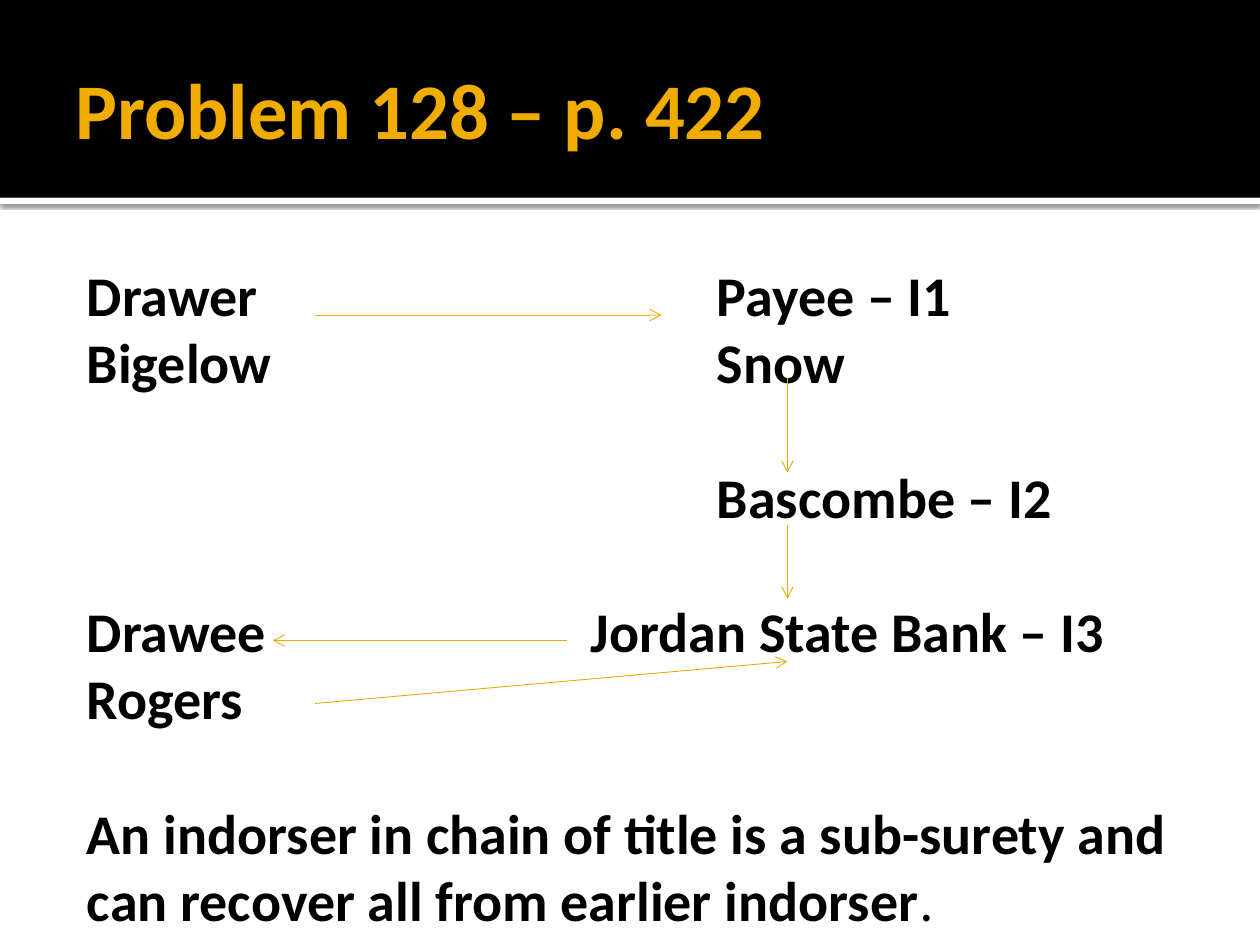
from typing import NamedTuple

from lxml import etree
from pptx import Presentation
from pptx.dml.color import RGBColor
from pptx.enum import shapes, text
from pptx.oxml import ns
from pptx.util import Pt

COLORS = {"black": "000000", "white": "FFFFFF", "gold": "F0AD00", "arrow": "EBA900"}
FONT = "Calibri"
LINE_HEIGHT = 38.4


class Box(NamedTuple):
    left: float
    top: float
    width: float
    height: float


class Arrow(NamedTuple):
    start: tuple[float, float]
    end: tuple[float, float]


class Row(NamedTuple):
    wording: str
    tab: float = 0
    gap: bool = False
    ending: str = ""


PARTY_ROWS = [
    Row("Drawer\tPayee – I1", tab=360),
    Row("Bigelow\tSnow", tab=360),
    Row("\tBascombe – I2", tab=360, gap=True),
    Row("Drawee\tJordan State Bank – I3", tab=288, gap=True),
    Row("Rogers"),
    Row("An indorser in chain of title is a sub-surety and "
        "can recover all from earlier indorser", gap=True, ending="."),
]
ARROWS = [
    Arrow((180, 180), (378, 180)),
    Arrow((450, 216), (450, 270)),
    Arrow((450, 300), (450, 342)),
    Arrow((324, 366), (156, 366)),
    Arrow((180, 402), (450, 378)),
]


def add_element(parent, tag: str, **attributes: str):
    return etree.SubElement(parent, ns.qn(tag), attributes)


def add_band(slide, box: Box, color: str):
    shape = slide.shapes.add_shape(shapes.MSO_SHAPE.RECTANGLE, *map(Pt, box))
    shape.shadow.inherit = False
    shape.fill.solid()
    shape.fill.fore_color.rgb = RGBColor.from_string(COLORS[color])
    shape.line.fill.background()
    return shape


def add_drop_shadow(shape) -> None:
    """Put a soft downward shadow into the shape's empty effect list."""
    effects = shape._element.spPr.find(ns.qn("a:effectLst"))
    shadow = add_element(effects, "a:outerShdw", blurRad=str(Pt(2.5)),
                         dist=str(Pt(0.8)), dir="5400000",
                         algn="tl", rotWithShape="0")
    color = add_element(shadow, "a:srgbClr", val=COLORS["black"])
    add_element(color, "a:alpha", val="60000")


def add_text_frame(slide, box: Box, insets: tuple[float, float, float, float], anchor):
    """Add a wrapping text box; insets are left, top, right, bottom."""
    frame = slide.shapes.add_textbox(*map(Pt, box)).text_frame
    frame.word_wrap = True
    frame.vertical_anchor = anchor
    frame.margin_left, frame.margin_top, frame.margin_right, frame.margin_bottom = map(Pt, insets)
    return frame


def add_text(paragraph, wording: str, *, size: float, color: str, bold: bool = True) -> None:
    run = paragraph.add_run()
    run.text = wording
    run.font.name = FONT
    run.font.size = Pt(size)
    run.font.bold = bold
    run.font.color.rgb = RGBColor.from_string(COLORS[color])


def add_row(paragraph, row: Row) -> None:
    paragraph.line_spacing = Pt(LINE_HEIGHT)
    paragraph.space_before = Pt(LINE_HEIGHT if row.gap else 0)
    if row.tab:
        tabs = add_element(paragraph._p.get_or_add_pPr(), "a:tabLst")
        add_element(tabs, "a:tab", pos=str(Pt(row.tab)), algn="l")
    add_text(paragraph, row.wording, size=32, color="black")
    if row.ending:
        add_text(paragraph, row.ending, size=32, color="black", bold=False)


def add_arrow(slide, arrow: Arrow) -> None:
    connector = slide.shapes.add_connector(
        shapes.MSO_CONNECTOR.STRAIGHT, *map(Pt, arrow.start + arrow.end))
    connector.line.color.rgb = RGBColor.from_string(COLORS["arrow"])
    connector.line.width = Pt(0.5)
    add_element(connector.line._get_or_add_ln(), "a:tailEnd", type="arrow")
    add_element(connector._element.spPr, "a:effectLst")


def main() -> None:
    presentation = Presentation()
    presentation.slide_width, presentation.slide_height = Pt(720), Pt(540)
    slide = presentation.slides.add_slide(presentation.slide_layouts[6])

    add_drop_shadow(add_band(slide, Box(0, 113, 720, 3.6), "white"))
    add_band(slide, Box(0, 0, 720, 113), "black")

    title = add_text_frame(slide, Box(36, 12.3, 648, 98.6), (7.2, 3.6, 3.6, 3.6),
                           text.MSO_ANCHOR.MIDDLE)
    add_text(title.paragraphs[0], "Problem 128 – p. 422", size=45, color="gold")

    body = add_text_frame(slide, Box(36, 139.7, 648, 364.3), (13.7, 9.2, 7.2, 3.6),
                          text.MSO_ANCHOR.TOP)
    for index, row in enumerate(PARTY_ROWS):
        add_row(body.add_paragraph() if index else body.paragraphs[0], row)

    for arrow in ARROWS:
        add_arrow(slide, arrow)

    presentation.save("out.pptx")


if __name__ == "__main__":
    main()
